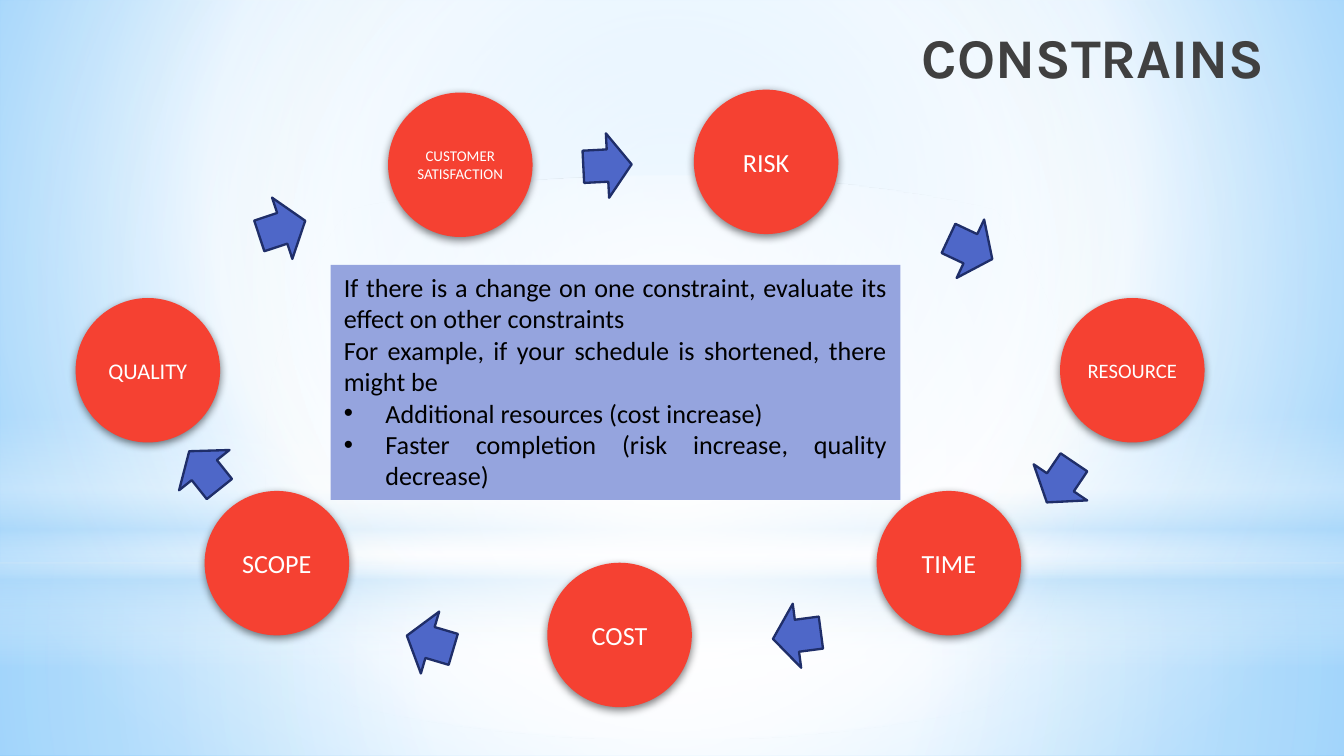
"""Build a slide showing seven project constraints in a cycle around a note."""
import pptx
import pptx.dml.color
import pptx.enum.shapes
import pptx.enum.text
import pptx.oxml
import pptx.oxml.ns
import pptx.util

WIDTH, HEIGHT = 10, 5.625
COLORS = {"circle": "F54132", "arrow": "4E67C8", "arrow_edge": "1F2E69", "panel": "95A4DE",
          "title": "404040", "label": "FFFFFF", "note": "000000",
          "sky": "9ED5FF", "deep": "5BB9FF", "white": "FFFFFF", "mist": "B4DCFA"}
SHAPES = pptx.enum.shapes.MSO_SHAPE
ALIGN = pptx.enum.text.PP_ALIGN
ANCHOR = pptx.enum.text.MSO_ANCHOR

# Positions are centres and sizes, in percent of the slide's width and height.
TITLE = ("CONSTRAINS", (50.85, 8.09, 88.5, 11.2))
CIRCLE_SIZE = (10.75, 19.11)
CIRCLES = [
    (["QUALITY"], 12, 11, 48.98),
    (["SCOPE"], 14, 20.6, 74.5),
    (["RISK"], 14, 57, 21.42),
    (["CUSTOMER", "SATISFACTION"], 8, 34.25, 21.8),
    (["COST"], 14, 46.1, 84),
    (["TIME"], 14, 70.6, 74.5),
    (["RESOURCE"], 11, 84.25, 48.98),
]
ARROW_SIZE = (3.6, 8.53)
ARROWS = [(32, 85, 16.5), (15.2, 62.2, 51.4), (21, 30.2, 161.7), (45.2, 21.9, 177.1),
          (72.2, 32.9, 205.2), (78.9, 63.8, 304), (59.3, 84.1, 352.5)]
PANEL = (45.8, 50.58, 42.4, 31.11)
NOTES = [
    ("If there is a change on one constraint, evaluate its effect on other constraints", False),
    ("For example, if your schedule is shortened, there might be", False),
    ("Additional resources (cost increase)", True),
    ("Faster completion (risk increase, quality decrease)", True),
]
CENTRE = (50, 50, 50, 50)
SKY = ([(0, "sky", 100), (60, "white", 100), (100, "deep", 100)], (20, 10, 20, 60))
BACKDROP = [
    (SHAPES.RECTANGLE, (50, 87.24, 100, 25.52),
     [(0, "white", 91), (37, "white", 76), (100, "mist", 79)], CENTRE),
    (SHAPES.RECTANGLE, (50, 37.24, 100, 74.49),
     [(0, "white", 89), (48, "white", 62), (100, "mist", 79)], CENTRE),
    (SHAPES.RECTANGLE, (50, 71.64, 100, 33.42),
     [(0, "white", 0), (29, "white", 30), (45, "mist", 40), (55, "white", 26),
      (65, "mist", 60), (100, "white", 0)], None),
    (SHAPES.OVAL, (50, 60.53, 100, 74.49), [(0, "white", 100), (56, "white", 0)], CENTRE),
]


def color(name):
    return pptx.dml.color.RGBColor.from_string(COLORS[name])


def frame(x, y, width, height):
    left, top = x - width / 2, y - height / 2
    shares = ((left, WIDTH), (top, HEIGHT), (width, WIDTH), (height, HEIGHT))
    return [pptx.util.Inches(share * full / 100) for share, full in shares]


def xml(tag, content):
    namespace = pptx.oxml.ns.nsdecls("a")
    return pptx.oxml.parse_xml(f"<a:{tag} {namespace}{content}</a:{tag.split()[0]}>")


def set_gradient(holder, stops, focus):
    marks = "".join(
        f'<a:gs pos="{at * 1000}"><a:srgbClr val="{COLORS[name]}">'
        f'<a:alpha val="{opacity * 1000}"/></a:srgbClr></a:gs>' for at, name, opacity in stops)
    if focus:
        sides = " ".join(f'{side}="{share * 1000}"' for side, share in zip("ltrb", focus))
        course = f'<a:path path="circle"><a:fillToRect {sides}/></a:path>'
    else:
        course = '<a:lin ang="5400000" scaled="0"/>'
    gradient = xml("gradFill", f' rotWithShape="1"><a:gsLst>{marks}</a:gsLst>{course}')
    holder.replace(holder.find(pptx.oxml.ns.qn("a:gradFill")), gradient)


def add_shape(page, kind, place, fill=None):
    shape = page.shapes.add_shape(kind, *frame(*place))
    shape.line.fill.background()
    shape.shadow.inherit = False
    if fill:
        shape.fill.solid()
        shape.fill.fore_color.rgb = color(fill)
    return shape


def write(shape, lines, size, ink, align, anchor, font="Calibri", bold=False):
    box = shape.text_frame
    box.word_wrap = True
    box.vertical_anchor = anchor
    box.text = "\n".join(lines)
    for para in box.paragraphs:
        para.alignment = align
        para.font.name, para.font.size, para.font.bold = font, pptx.util.Pt(size), bold
        para.font.color.rgb = color(ink)
    return box


def add_backdrop(page):
    page.background.fill.gradient()
    set_gradient(page._element.find(".//" + pptx.oxml.ns.qn("p:bgPr")), *SKY)
    for kind, place, stops, focus in BACKDROP:
        shape = add_shape(page, kind, place)
        shape.fill.gradient()
        set_gradient(shape._element.spPr, stops, focus)


def add_title(page):
    text, place = TITLE
    box = write(page.shapes.add_textbox(*frame(*place)), [text], 30, "title",
                ALIGN.RIGHT, ANCHOR.BOTTOM, "Karla", True)
    box.margin_top = box.margin_bottom = pptx.util.Inches(0.1)


def add_circle(page, lines, size, x, y):
    circle = add_shape(page, SHAPES.OVAL, (x, y, *CIRCLE_SIZE), "circle")
    box = write(circle, lines, size, "label", ALIGN.CENTER, ANCHOR.MIDDLE)
    box.margin_left = box.margin_right = 0
    effects = circle._element.spPr.find(pptx.oxml.ns.qn("a:effectLst"))
    blur, distance = pptx.util.Pt(4.5), pptx.util.Pt(1.5)
    effects.append(xml("outerShdw", f' blurRad="{blur}" dist="{distance}" dir="5400000">'
                       '<a:srgbClr val="000000"><a:alpha val="50000"/></a:srgbClr>'))


def add_arrow(page, x, y, turn):
    arrow = add_shape(page, SHAPES.LEFT_ARROW, (x, y, *ARROW_SIZE), "arrow")
    arrow.rotation = turn
    arrow.line.color.rgb = color("arrow_edge")
    arrow.line.width = pptx.util.Pt(1.25)


def add_panel(page):
    panel = add_shape(page, SHAPES.RECTANGLE, PANEL, "panel")
    box = write(panel, [text for text, _ in NOTES], 14, "note", ALIGN.JUSTIFY, ANCHOR.TOP)
    indent = pptx.util.Inches(0.31)
    for para, (_, bulleted) in zip(box.paragraphs, NOTES):
        if bulleted:
            settings = para._p.get_or_add_pPr()
            settings.set("marL", str(indent))
            settings.set("indent", str(-indent))
            settings.insert(0, xml("buFont", ' typeface="Arial">'))
            settings.insert(1, xml("buChar", ' char="•">'))


def main():
    deck = pptx.Presentation()
    deck.slide_width, deck.slide_height = pptx.util.Inches(WIDTH), pptx.util.Inches(HEIGHT)
    page = deck.slides.add_slide(deck.slide_layouts[6])
    add_backdrop(page)
    add_title(page)
    for circle in CIRCLES:
        add_circle(page, *circle)
    for arrow in ARROWS:
        add_arrow(page, *arrow)
    add_panel(page)
    deck.save("out.pptx")


if __name__ == "__main__":
    main()
